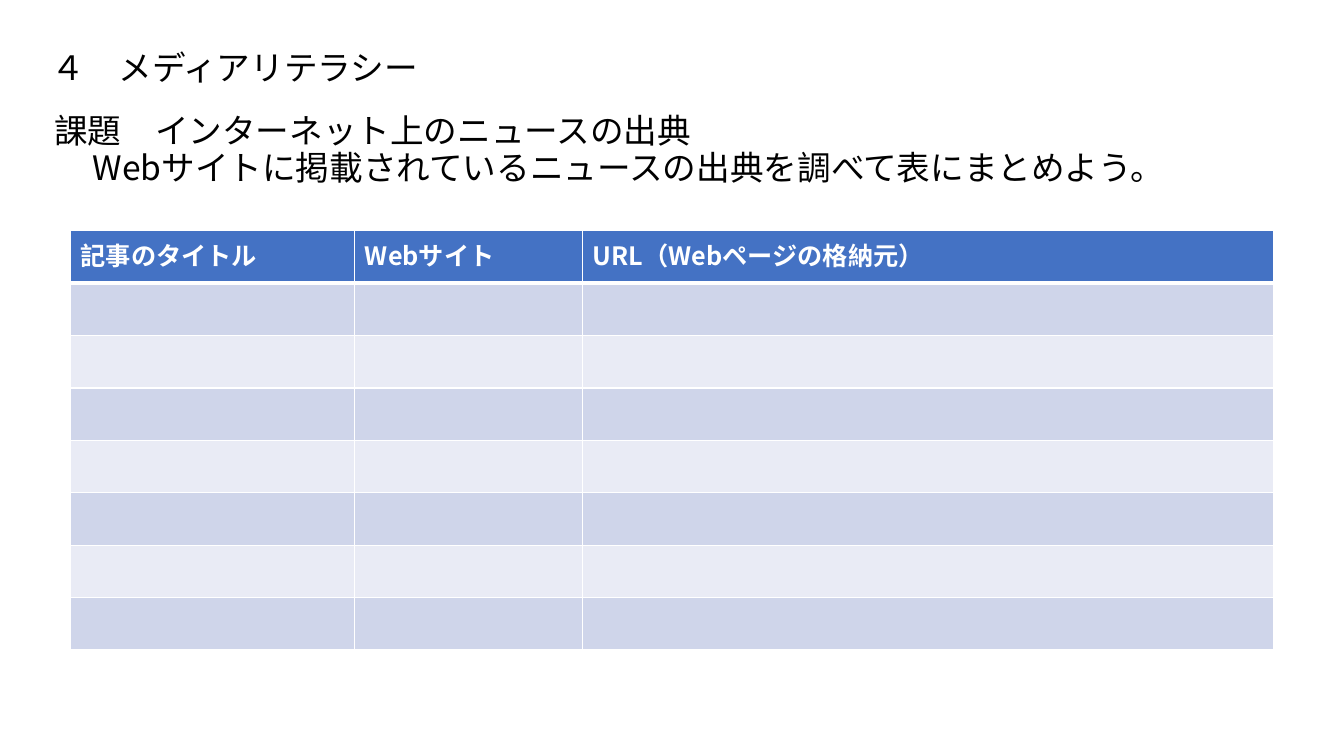
from dataclasses import dataclass

from lxml import etree
from pptx import Presentation
from pptx.dml.color import RGBColor
from pptx.enum.text import MSO_ANCHOR
from pptx.oxml.ns import qn
from pptx.util import Inches, Pt

MIDDLE = MSO_ANCHOR.MIDDLE
TOP = MSO_ANCHOR.TOP
FONT = "Noto Sans CJK JP"
COLORS = {
    "text": "000000",
    "white": "FFFFFF",
    "header": "4472C4",
    "odd_row": "CFD5EA",
    "even_row": "E9EBF5",
}
ROW_COUNT = 8
ROW_HEIGHT = 0.52


@dataclass
class Line:
    text: str
    indent: float = 0


@dataclass
class TextBlock:
    left: float
    top: float
    width: float
    height: float
    anchor: MSO_ANCHOR
    lines: list[Line]


@dataclass
class Column:
    heading: str
    width: float


TEXT_BLOCKS = [
    TextBlock(0.41, 0.4, 11.5, 0.59, MIDDLE, [Line("４　メディアリテラシー")]),
    TextBlock(0.44, 1.09, 12.36, 1.09, TOP, [
        Line("課題　インターネット上のニュースの出典"),
        Line("Webサイトに掲載されているニュースの出典を調べて表にまとめよう。", 0.38),
    ]),
]
COLUMNS = [
    Column("記事のタイトル", 2.82),
    Column("Webサイト", 2.26),
    Column("URL（Webページの格納元）", 6.85),
]


def add_run(paragraph, text: str, size: int, color: str, bold: bool = False) -> None:
    run = paragraph.add_run()
    run.text = text
    run.font.size = Pt(size)
    run.font.bold = bold
    run.font.color.rgb = RGBColor.from_string(COLORS[color])
    run.font.name = FONT
    etree.SubElement(run.font._element, qn("a:ea"), typeface=FONT)


def add_text_block(slide, block: TextBlock) -> None:
    shape = slide.shapes.add_textbox(
        Inches(block.left), Inches(block.top), Inches(block.width), Inches(block.height))
    frame = shape.text_frame
    frame.word_wrap = True
    frame.vertical_anchor = block.anchor
    for index, line in enumerate(block.lines):
        paragraph = frame.add_paragraph() if index else frame.paragraphs[0]
        paragraph.line_spacing = 0.9
        if line.indent:
            properties = paragraph._p.get_or_add_pPr()
            properties.set("marL", str(Inches(line.indent)))
            properties.set("indent", "0")
        add_run(paragraph, line.text, 24, "text")


def set_borders(cell, top: int, bottom: int) -> None:
    properties = cell._tc.get_or_add_tcPr()
    for tag, width in (("a:lnL", 1), ("a:lnR", 1), ("a:lnT", top), ("a:lnB", bottom)):
        border = etree.SubElement(properties, qn(tag), w=str(Pt(width)))
        fill = etree.SubElement(border, qn("a:solidFill"))
        etree.SubElement(fill, qn("a:srgbClr"), val=COLORS["white"])


def add_source_table(slide, columns: list[Column]) -> None:
    width = sum(column.width for column in columns)
    table = slide.shapes.add_table(
        ROW_COUNT, len(columns), Inches(0.7), Inches(2.29),
        Inches(width), Inches(ROW_COUNT * ROW_HEIGHT)).table
    for index, column in enumerate(columns):
        table.columns[index].width = Inches(column.width)
        add_run(table.cell(0, index).text_frame.paragraphs[0],
                column.heading, 18, "white", True)
    for index, row in enumerate(table.rows):
        row.height = Inches(ROW_HEIGHT)
        color = "header" if index == 0 else "odd_row" if index % 2 else "even_row"
        for cell in row.cells:
            set_borders(cell, 3 if index == 1 else 1, 3 if index == 0 else 1)
            cell.fill.solid()
            cell.fill.fore_color.rgb = RGBColor.from_string(COLORS[color])


def main() -> None:
    """Build the media literacy worksheet slide."""
    presentation = Presentation()
    presentation.slide_width = Inches(13.33)
    presentation.slide_height = Inches(7.5)
    slide = presentation.slides.add_slide(presentation.slide_layouts[6])
    for block in TEXT_BLOCKS:
        add_text_block(slide, block)
    add_source_table(slide, COLUMNS)
    presentation.save("out.pptx")


if __name__ == "__main__":
    main()
